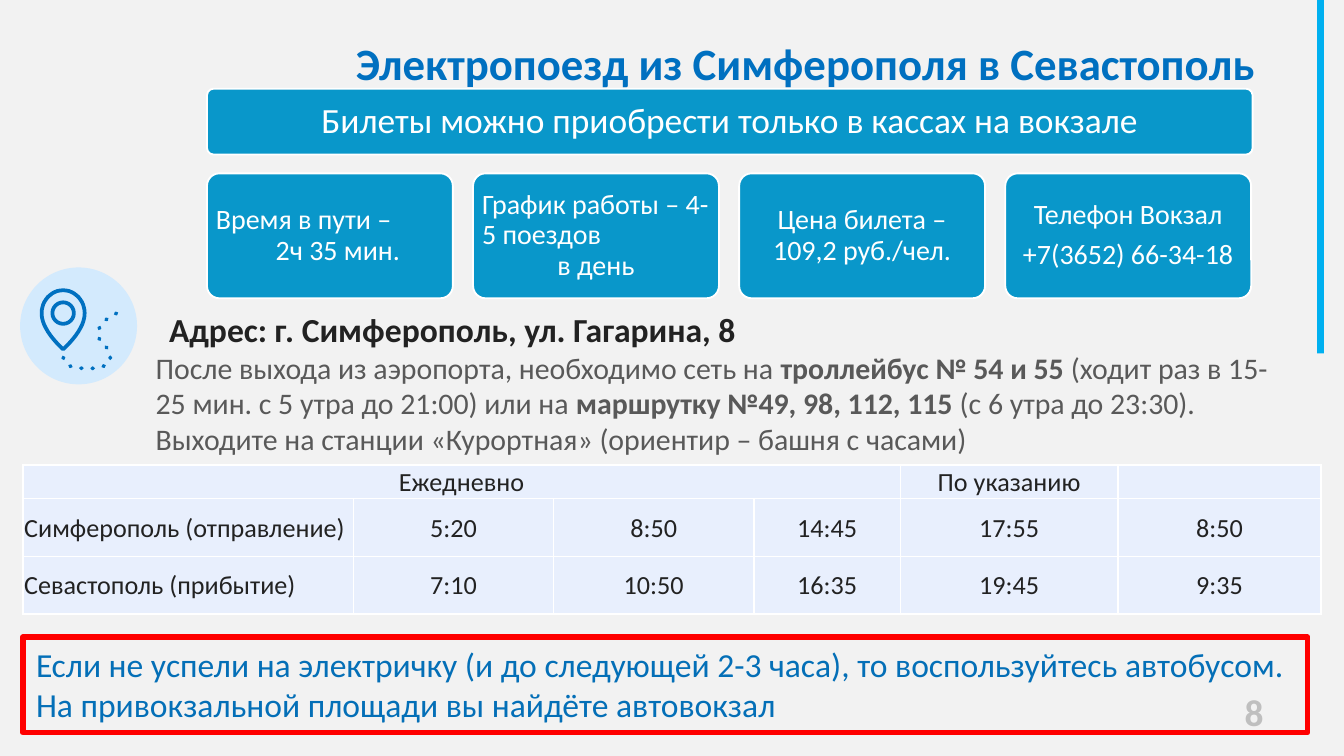
from lxml import etree
from pptx import Presentation
from pptx.dml.color import RGBColor
from pptx.enum.shapes import MSO_SHAPE
from pptx.enum.text import MSO_ANCHOR, PP_ALIGN
from pptx.oxml.ns import qn
from pptx.util import Inches, Pt

LEFT, CENTER, RIGHT = PP_ALIGN.LEFT, PP_ALIGN.CENTER, PP_ALIGN.RIGHT
TOP, MIDDLE = MSO_ANCHOR.TOP, MSO_ANCHOR.MIDDLE
RECTANGLE, ROUNDED, OVAL = MSO_SHAPE.RECTANGLE, MSO_SHAPE.ROUNDED_RECTANGLE, MSO_SHAPE.OVAL

THEME = {
    "font": "Calibri",
    "background": "F2F2F2", "title": "0070C0", "card": "0997CA", "white": "FFFFFF",
    "dark": "222222", "body": "595959", "note": "046FB7", "alert": "FF0000",
    "accent": "00B0F0", "badge": "D3EAFD", "cell": "E8EFFD", "number": "BFBFBF",
    "title_size": 24, "number_size": 20, "banner_size": 19, "heading_size": 18,
    "body_size": 16, "card_size": 15, "table_size": 14,
}

# Content: a paragraph is a list of (text, bold) runs
TITLE = "Электропоезд из Симферополя в Севастополь"
BANNER = "Билеты можно приобрести только в кассах на вокзале"
CARDS = [  # (text, alignment, left indent in inches, points after)
    [("Время в пути –", LEFT, 0, 0), ("2ч 35 мин.", CENTER, 0.12, 0)],
    [("График работы – 4-5 поездов", LEFT, 0, 0), ("в день", CENTER, 0, 0)],
    [("Цена билета – 109,2 руб./чел.", CENTER, 0, 0)],
    [("Телефон Вокзал", CENTER, 0, 5.25), ("+7(3652) 66-34-18", CENTER, 0, 0)],
]
ADDRESS = "Адрес: г. Симферополь, ул. Гагарина, 8"
DIRECTIONS = [
    [("После выхода из аэропорта, необходимо сеть на ", False),
     ("троллейбус № 54 и 55 ", True),
     ("(ходит раз в 15-25 мин. с 5 утра до 21:00) или на ", False),
     ("маршрутку №49, 98, 112, 115 ", True),
     ("(с 6 утра до 23:30).", False)],
    [("Выходите на станции «Курортная» (ориентир – башня с часами)", False)],
]
TIMETABLE = [
    ["Ежедневно", "", "", "", "По указанию", ""],
    ["Симферополь (отправление)", "5:20", "8:50", "14:45", "17:55", "8:50"],
    ["Севастополь (прибытие)", "7:10", "10:50", "16:35", "19:45", "9:35"],
]
COLUMN_WIDTHS = [2.46, 1.49, 1.49, 1.09, 1.62, 1.51]
ROW_HEIGHTS = [0.25, 0.43, 0.43]
NOTE = ("Если не успели на электричку (и до следующей 2-3 часа), то воспользуйтесь "
        "автобусом. На привокзальной площади вы найдёте автовокзал")
PAGE_NUMBER = "8"

# Icon curves in inches: a start point, then cubic segments
PIN = [(0.47, 2.6), (0.43, 2.56, 0.31, 2.45, 0.31, 2.33), (0.31, 2.24, 0.38, 2.16, 0.47, 2.16),
       (0.56, 2.16, 0.63, 2.24, 0.63, 2.33), (0.63, 2.45, 0.51, 2.56, 0.47, 2.6)]
ROUTE = [(0.47, 2.66), (0.49, 2.73, 0.55, 2.74, 0.62, 2.74), (0.72, 2.75, 0.83, 2.73, 0.82, 2.65),
         (0.82, 2.58, 0.73, 2.55, 0.73, 2.49), (0.73, 2.4, 0.81, 2.36, 0.89, 2.32)]


def color(name):
    return RGBColor.from_string(THEME[name])


def paint(shape, fill=None, line=None, width=1):
    shape.shadow.inherit = False
    if fill:
        shape.fill.solid()
        shape.fill.fore_color.rgb = color(fill)
    else:
        shape.fill.background()
    if line:
        shape.line.color.rgb = color(line)
        shape.line.width = Pt(width)
    else:
        shape.line.fill.background()


def add_shape(kind, box, **look):
    shape = slide.shapes.add_shape(kind, *map(Inches, box))
    paint(shape, **look)
    return shape


def add_textbox(box):
    textbox = slide.shapes.add_textbox(*map(Inches, box))
    set_frame(textbox.text_frame)
    return textbox


def set_frame(target, anchor=TOP, inset=None):
    values = {"word_wrap": True, "vertical_anchor": anchor}
    if inset is not None:
        values |= {f"margin_{side}": Inches(inset) for side in ("left", "right", "top", "bottom")}
    for name, value in values.items():
        setattr(target, name, value)


def write(paragraph, runs, size, ink, **layout):
    for name, value in layout.items():
        setattr(paragraph, name, value)
    for text, bold in runs:
        run = paragraph.add_run()
        run.text = text
        for name, value in {"name": THEME["font"], "size": Pt(THEME[size]), "bold": bold}.items():
            setattr(run.font, name, value)
        run.font.color.rgb = color(ink)


def write_line(shape, text, size, ink, bold=False, align=LEFT, **layout):
    write(shape.text_frame.paragraphs[0], [(text, bold)], size, ink, alignment=align, **layout)


def add_curve(curve, closed):
    steps, units = 12, 1000
    points = [curve[0]]
    for x1, y1, x2, y2, x3, y3 in curve[1:]:
        x0, y0 = points[-1]
        for step in range(1, steps + 1):
            t = step / steps
            weights = ((1 - t) ** 3, 3 * t * (1 - t) ** 2, 3 * t * t * (1 - t), t ** 3)
            points.append(tuple(sum(w * v for w, v in zip(weights, axis))
                                for axis in ((x0, x1, x2, x3), (y0, y1, y2, y3))))
    scaled = [(round(x * units), round(y * units)) for x, y in points]
    builder = slide.shapes.build_freeform(*scaled[0], scale=Inches(1) / units)
    builder.add_line_segments(scaled[1:], close=closed)
    shape = builder.convert_to_shape()
    paint(shape, line="title", width=2)
    return shape


def add_borders(cell):
    properties = cell._tc.get_or_add_tcPr()
    for side in ("lnL", "lnR", "lnT", "lnB"):
        border = etree.SubElement(properties, qn(f"a:{side}"), w=str(Pt(1)))
        fill = etree.SubElement(border, qn("a:solidFill"))
        etree.SubElement(fill, qn("a:srgbClr"), val=THEME["white"])


presentation = Presentation()
presentation.slide_width, presentation.slide_height = Inches(10), Inches(10 * 9 / 16)
slide = presentation.slides.add_slide(presentation.slide_layouts[6])
slide.background.fill.solid()
slide.background.fill.fore_color.rgb = color("background")

# Timetable
table = slide.shapes.add_table(len(ROW_HEIGHTS), len(COLUMN_WIDTHS), Inches(0.17), Inches(3.46),
                               Inches(sum(COLUMN_WIDTHS)), Inches(sum(ROW_HEIGHTS))).table
for column, width in zip(table.columns, COLUMN_WIDTHS):
    column.width = Inches(width)
for row, height in zip(table.rows, ROW_HEIGHTS):
    row.height = Inches(height)
CELL_FORMAT = {"vertical_anchor": MIDDLE, "margin_left": Inches(0.01), "margin_right": Inches(0.01),
               "margin_top": Inches(0.01), "margin_bottom": 0}
for row_index, texts in enumerate(TIMETABLE):
    for column_index, text in enumerate(texts):
        cell = table.cell(row_index, column_index)
        add_borders(cell)
        cell.fill.solid()
        cell.fill.fore_color.rgb = color("cell")
        for name, value in CELL_FORMAT.items():
            setattr(cell, name, value)
        paragraph = cell.text_frame.paragraphs[0]
        if text:
            label = row_index > 0 and column_index == 0
            write(paragraph, [(text, False)], "table_size", "dark", alignment=LEFT if label else CENTER)
        else:
            paragraph._p.get_or_add_endParaRPr().set("sz", str(THEME["table_size"] * 100))
table.cell(0, 0).merge(table.cell(0, 3))

# Bottom note, page number and side bar
note = add_shape(RECTANGLE, (0.17, 4.74, 9.56, 0.71), line="alert", width=3)
set_frame(note.text_frame)
write_line(note, NOTE, "heading_size", "note")
number = add_textbox((7.17, 5.08, 2.33, 0.3))
write_line(number, PAGE_NUMBER, "number_size", "number", bold=True, align=RIGHT)
add_shape(RECTANGLE, (9.8, 0, 0.05, 2.63), fill="accent")

# Directions
frame = add_textbox((1.06, 2.55, 8.61, 0.91)).text_frame
for index, runs in enumerate(DIRECTIONS):
    write(frame.add_paragraph() if index else frame.paragraphs[0], runs, "body_size", "body")

# Banner and the row of cards
banner = add_shape(ROUNDED, (1.54, 0.66, 7.78, 0.49), fill="card", line="white")
banner.adjustments[0] = 0.1
set_frame(banner.text_frame, MIDDLE, 0.08)
write_line(banner, BANNER, "banner_size", "white", align=CENTER, line_spacing=0.9)
for card_index, lines in enumerate(CARDS):
    card = add_shape(ROUNDED, (1.54 + 1.98 * card_index, 1.29, 1.83, 0.93), fill="card", line="white")
    card.adjustments[0] = 0.1
    frame = card.text_frame
    set_frame(frame, MIDDLE, 0.04)
    for index, (text, align, indent, after) in enumerate(lines):
        paragraph = frame.add_paragraph() if index else frame.paragraphs[0]
        if indent:
            paragraph._p.get_or_add_pPr().set("marL", str(Inches(indent)))
        write(paragraph, [(text, False)], "card_size", "white",
              alignment=align, line_spacing=0.9, space_after=Pt(after))

# Title and address
for text, box, size, ink in [(TITLE, (2.55, 0.22, 6.95, 0.5), "title_size", "title"),
                             (ADDRESS, (1.16, 2.25, 6.01, 0.4), "heading_size", "dark")]:
    write_line(add_textbox(box), text, size, ink, bold=True)

# Route icon: badge, pin, ring and dashed path
add_shape(OVAL, (0.15, 1.99, 0.87, 0.87), fill="badge")
add_curve(PIN, closed=True)
add_shape(OVAL, (0.39, 2.25, 0.16, 0.16), line="title", width=2)
route_line = add_curve(ROUTE, closed=False).line._get_or_add_ln()
route_line.set("cap", "rnd")
dashes = etree.Element(qn("a:custDash"))
etree.SubElement(dashes, qn("a:ds"), d="125000", sp="175000")
route_line.find(qn("a:solidFill")).addnext(dashes)

presentation.save("out.pptx")
